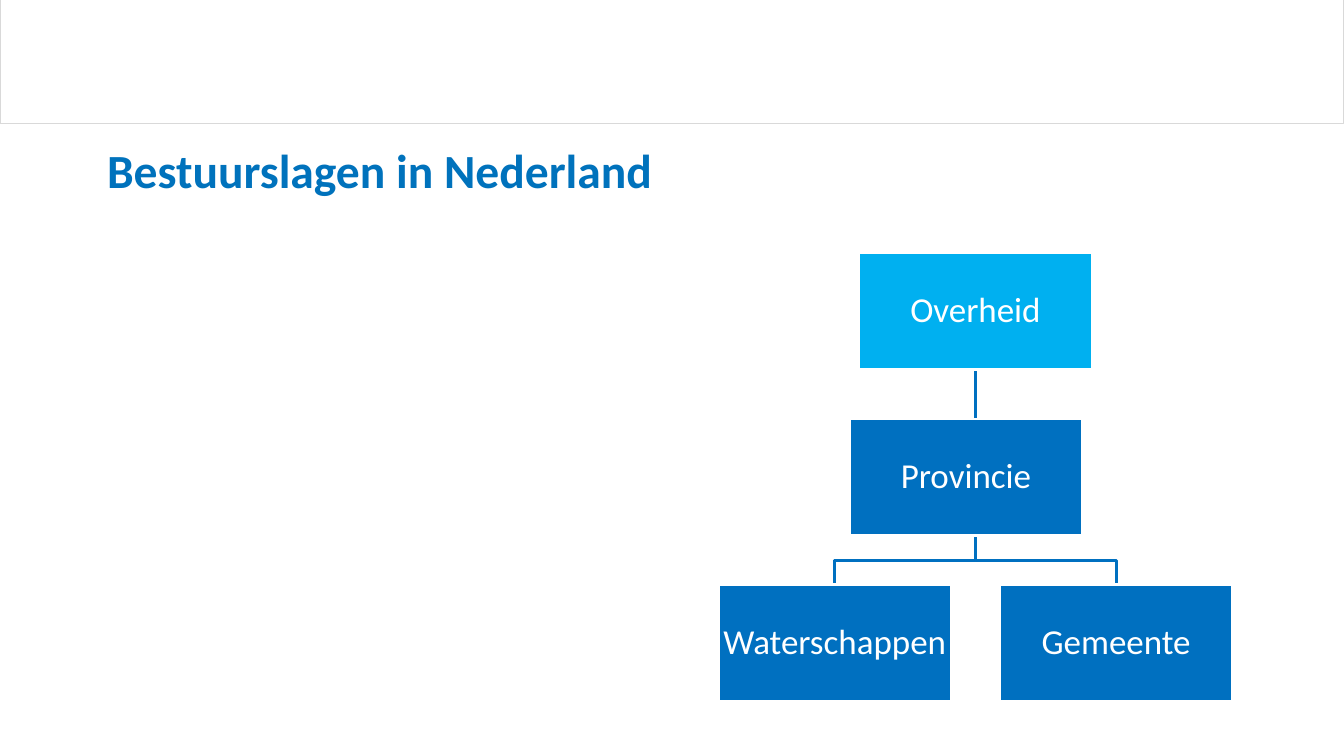
"""Build a slide with an organisation chart of the Dutch layers of government."""
import pptx
import pptx.dml.color
import pptx.enum.shapes
import pptx.enum.text
import pptx.util

PX = 9525
TITLE_BLUE = pptx.dml.color.RGBColor(0x00, 0x72, 0xBC)
BLUE = pptx.dml.color.RGBColor(0x00, 0x70, 0xC0)
LIGHT_BLUE = pptx.dml.color.RGBColor(0x00, 0xB0, 0xF0)
WHITE = pptx.dml.color.RGBColor(0xFF, 0xFF, 0xFF)
GREY = pptx.dml.color.RGBColor(0xD9, 0xD9, 0xD9)

BOX_WIDTH, BOX_HEIGHT = 222, 111
TOP, ROW_STEP = 241, 158
TRUNK_X, BRANCH_Y = 929, 534
BRANCH_OFFSET = 134
BOXES = [
    ("Overheid", TRUNK_X, 0, LIGHT_BLUE),
    ("Waterschappen", TRUNK_X - BRANCH_OFFSET, 2, BLUE),
    ("Gemeente", TRUNK_X + BRANCH_OFFSET, 2, BLUE),
    ("Provincie", TRUNK_X - 9, 1, BLUE),
]

presentation = pptx.Presentation()
presentation.slide_width = 1280 * PX
presentation.slide_height = 720 * PX
slide = presentation.slides.add_slide(presentation.slide_layouts[5])


def add_rectangle(left, top, width, height, fill, line, line_width):
    """Add a plain rectangle measured in px."""
    shape = slide.shapes.add_shape(
        pptx.enum.shapes.MSO_SHAPE.RECTANGLE,
        left * PX, top * PX, width * PX, height * PX)
    shape.shadow.inherit = False
    shape.fill.solid()
    shape.fill.fore_color.rgb = fill
    shape.line.color.rgb = line
    shape.line.width = pptx.util.Pt(line_width)
    return shape


def add_text(frame, text, size, color, alignment, anchor, margin):
    """Write one formatted run in a text frame."""
    frame.margin_left = frame.margin_right = margin * PX
    frame.margin_top = frame.margin_bottom = margin * PX
    frame.vertical_anchor = anchor
    paragraph = frame.paragraphs[0]
    paragraph.alignment = alignment
    run = paragraph.add_run()
    run.text = text
    run.font.name = "Calibri"
    run.font.size = pptx.util.Pt(size)
    run.font.color.rgb = color
    return paragraph


add_rectangle(0, 0, 1280, 118, WHITE, GREY, 0.75)

title = slide.shapes.title
title.left, title.top, title.width, title.height = 102 * PX, 141 * PX, 1073 * PX, 48 * PX
title.text_frame.word_wrap = True
title.text_frame.auto_size = pptx.enum.text.MSO_AUTO_SIZE.SHAPE_TO_FIT_TEXT
paragraph = add_text(title.text_frame, "Bestuurslagen in Nederland", 34, TITLE_BLUE,
                     pptx.enum.text.PP_ALIGN.LEFT, pptx.enum.text.MSO_ANCHOR.TOP, 0)
paragraph.line_spacing = pptx.util.Pt(36)
paragraph.runs[0].font.bold = True

for child_x in (TRUNK_X + BRANCH_OFFSET, TRUNK_X - BRANCH_OFFSET):
    builder = slide.shapes.build_freeform(TRUNK_X, TOP + BOX_HEIGHT, scale=PX)
    builder.add_line_segments(
        [(TRUNK_X, BRANCH_Y), (child_x, BRANCH_Y), (child_x, TOP + 2 * ROW_STEP)],
        close=False)
    branch = builder.convert_to_shape()
    branch.shadow.inherit = False
    branch.fill.background()
    branch.line.color.rgb = BLUE
    branch.line.width = pptx.util.Pt(2)

for label, center_x, row, fill in BOXES:
    box = add_rectangle(center_x - BOX_WIDTH // 2, TOP + row * ROW_STEP,
                        BOX_WIDTH, BOX_HEIGHT, fill, WHITE, 2)
    box.text_frame.word_wrap = True
    paragraph = add_text(box.text_frame, label, 25, WHITE,
                         pptx.enum.text.PP_ALIGN.CENTER,
                         pptx.enum.text.MSO_ANCHOR.MIDDLE, 2)
    paragraph.line_spacing = 0.9

presentation.save("out.pptx")
